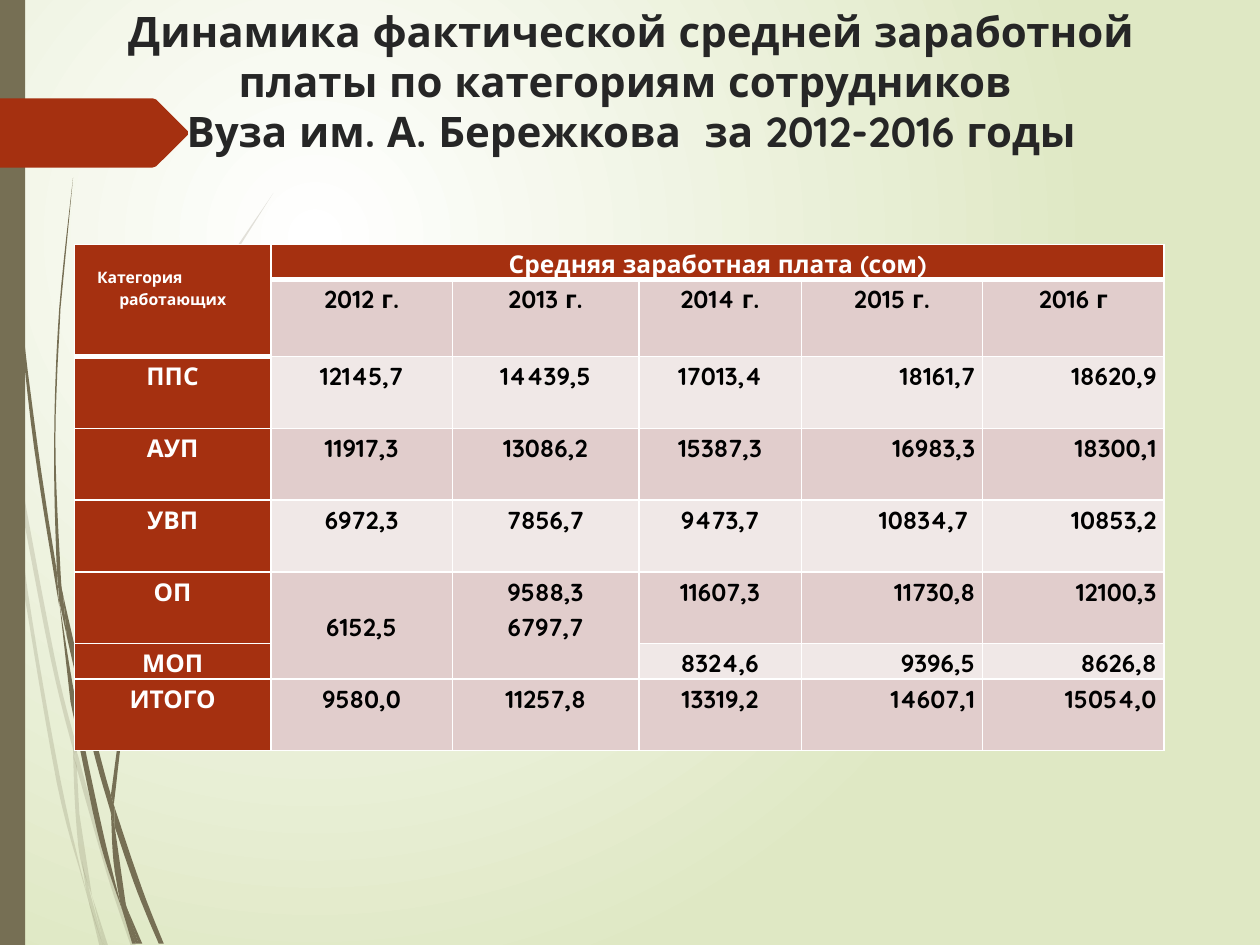
from dataclasses import dataclass
from lxml import etree
from pptx import Presentation
from pptx.dml.color import RGBColor
from pptx.enum.shapes import MSO_SHAPE
from pptx.enum.text import MSO_ANCHOR, PP_ALIGN
from pptx.oxml.ns import qn
from pptx.util import Inches, Pt

RECTANGLE = MSO_SHAPE.RECTANGLE
TOP, MIDDLE = MSO_ANCHOR.TOP, MSO_ANCHOR.MIDDLE
LEFT, CENTER, RIGHT = PP_ALIGN.LEFT, PP_ALIGN.CENTER, PP_ALIGN.RIGHT


@dataclass(frozen=True)
class Theme:
    """Colours, font and type sizes of the slide."""
    font: str = "Quicksand"
    title_size: int = 24
    table_size: int = 14
    corner_size: int = 9
    white: str = "FFFFFF"
    black: str = "000000"
    title: str = "262626"
    backdrop: str = "DFE8C4"
    olive: str = "766F54"
    accent: str = "A53010"
    band_dark: str = "E1CDCC"
    band_light: str = "F0E8E7"


THEME = Theme()

TITLE = ("Динамика фактической средней заработной платы по категориям сотрудников "
         "\vВуза им. А. Бережкова  за 2012-2016 годы")
COLUMNS = (1.56, 1.44, 1.48, 1.29, 1.44, 1.44)
ROWS = (0.28, 0.61, 0.57, 0.57, 0.57, 0.57, 0.28, 0.57)
CORNER = "Категория\nработающих"
CELLS = (
    (CORNER, "Средняя заработная плата (сом)", "", "", "", ""),
    ("", "2012 г.", "2013 г.", "2014 г.", "2015 г.", "2016 г"),
    ("ППС", "12145,7", "14439,5", "17013,4", "18161,7", "18620,9"),
    ("АУП", "11917,3", "13086,2", "15387,3", "16983,3", "18300,1"),
    ("УВП", "6972,3", "7856,7", "9473,7", "10834,7 ", "10853,2"),
    ("ОП", "6152,5", "9588,3\n6797,7", "11607,3", "11730,8", "12100,3"),
    ("МОП", "", "", "8324,6", "9396,5", "8626,8"),
    ("ИТОГО", "9580,0", "11257,8", "13319,2", "14607,1", "15054,0"),
)
MERGES = ((0, 0, 1, 0), (0, 1, 0, 5), (5, 1, 6, 1), (5, 2, 6, 2))
LIGHT_ROWS = (2, 4, 6)

PALE_WISPS = (
    (((0.08, 3.5), (0.06, 3.22), (0, 2.82)), ((0, 2.99), (0.07, 3.44))),
    (((0.1, 3.45), (0.43, 5.2), (0.59, 5.86)), ((0.59, 5.99), (0.4, 5.22), (0.12, 3.76))),
    (((0.61, 5.96), (0.64, 6.07), (0.88, 6.92), (1.08, 7.51)),
     ((1.04, 7.51), (0.85, 6.94), (0.61, 6.1))),
    (((0.73, 7.11), (0.86, 7.51)), ((0.83, 7.51),)),
    (((0.08, 3.5), (0.22, 4.69), (0.48, 6.19), (0.7, 7.14)),
     ((0.64, 6.93), (0.45, 6.21), (0.19, 4.7))),
    (((0.58, 5.99), (0.6, 6.46), (0.64, 6.83), (0.73, 7.11)), ((0.63, 6.46), (0.61, 6.08))),
    (((0.59, 5.84), (0.75, 4.61), (1.1, 3.48), (1.58, 2.44), (2.17, 1.53)),
     ((1.59, 2.45), (1.11, 3.49), (0.76, 4.62), (0.61, 5.84), (0.61, 5.96))),
    (((0.7, 7.14), (0.79, 7.51)), ((0.82, 7.51),)),
    (((0.61, 6.1), (0.61, 5.96)), ((0.59, 5.86), (0.58, 5.99))),
    (((0.65, 6.83), (0.7, 7.14), (0.82, 7.51)), ((0.83, 7.51), (0.67, 6.92))),
)
DARK_WISPS = (
    (((0.02, 0), (0.05, 1.1), (0.14, 2.33), (0.27, 3.55), (0.47, 4.81)),
     ((0.45, 4.53), (0.3, 3.55), (0.15, 2.32), (0.06, 1.09), (0.03, 0))),
    (((0.5, 4.72), (0.77, 5.9), (0.88, 6.31)), ((0.88, 6.45), (0.73, 5.92), (0.53, 5.05))),
    (((0.91, 6.41), (1.13, 7.06), (1.3, 7.49)), ((1.26, 7.49), (1.09, 7.08), (0.91, 6.56))),
    (((0.47, 4.77), (0.6, 5.56), (0.81, 6.57), (0.97, 7.22)),
     ((0.92, 7.08), (0.77, 6.59), (0.56, 5.57))),
    (((0.49, 4.72), (0.45, 4.49), (0.43, 3.49), (0.47, 2.45), (0.58, 1.41)),
     ((0.48, 2.45), (0.44, 3.49), (0.48, 4.53), (0.5, 4.72))),
    (((1, 7.19), (1.13, 7.49)), ((1.1, 7.49),)),
    (((0.45, 4.49), (0.5, 4.72)), ((0.53, 5.05), (0.47, 4.77))),
    (((0.88, 6.31), (1.01, 5.51), (1.29, 4.74), (1.68, 4.05), (2.15, 3.44)),
     ((2.16, 3.44), (1.69, 4.06), (1.31, 4.76), (1.03, 5.52), (0.91, 6.33), (0.91, 6.41))),
    (((0.97, 7.22), (1.08, 7.49)), ((1.05, 7.49),)),
    (((0.88, 6.45), (0.91, 6.91), (1, 7.19)), ((0.91, 6.56),)),
    (((0.88, 6.31), (0.91, 6.41)), ((0.91, 6.56), (0.88, 6.45))),
    (((0.91, 6.91), (0.97, 7.22), (1.08, 7.49)), ((1.1, 7.49), (0.96, 7.06))),
)
ARROW = ((0, 0.78), (1.21, 0.78), (1.24, 0.79), (1.49, 1.04),
         (1.49, 1.07), (1.24, 1.32), (1.21, 1.33), (0, 1.33))


def color(value):
    """Turn a hex string into a colour."""
    return RGBColor.from_string(value)


def paint(shape, fill, opacity=100):
    """Give a shape a flat fill without line or shadow."""
    shape.shadow.inherit = False
    shape.line.fill.background()
    shape.fill.solid()
    shape.fill.fore_color.rgb = color(fill)
    if opacity < 100:
        node = shape.fill._xPr.find(".//" + qn("a:srgbClr"))
        etree.SubElement(node, qn("a:alpha"), val=str(opacity * 1000))


def smooth(anchors, steps=6):
    """Run a Catmull-Rom curve through the anchors."""
    padded = (anchors[0], *anchors, anchors[-1])
    points = [anchors[0]]
    for a, b, c, d in zip(padded, padded[1:], padded[2:], padded[3:]):
        for t in (step / steps for step in range(1, steps + 1)):
            points.append(tuple(
                q + (r - p) * t / 2 + (2 * p - 5 * q + 4 * r - s) * t ** 2 / 2
                + (3 * q - p - 3 * r + s) * t ** 3 / 2
                for p, q, r, s in zip(a, b, c, d)))
    return points


def add_outline(slide, points, fill, opacity=100):
    """Draw a closed outline from points in inches."""
    scaled = [(x * 1000, y * 1000) for x, y in points]
    builder = slide.shapes.build_freeform(*scaled[0], scale=Inches(1) / 1000)
    builder.add_line_segments(scaled[1:], close=True)
    paint(builder.convert_to_shape(), fill, opacity)


def set_background(slide):
    """Fill the background with a radial gradient."""
    fill = slide.background.fill
    fill.gradient()
    for stop, value in zip(fill.gradient_stops, (THEME.white, THEME.backdrop)):
        stop.color.rgb = color(value)
    gradient = slide.element.find(".//" + qn("a:gradFill"))
    gradient.remove(gradient.find(qn("a:lin")))
    radial = etree.SubElement(gradient, qn("a:path"), path="circle")
    etree.SubElement(radial, qn("a:fillToRect"), l="50000", t="50000", r="100000", b="100000")


def style_paragraph(paragraph, size, value, alignment, spacing):
    """Set the type of a paragraph."""
    paragraph.alignment = alignment
    paragraph.line_spacing = spacing
    font = paragraph.font
    font.name, font.size, font.bold = THEME.font, Pt(size), True
    font.color.rgb = color(value)


def add_title(slide):
    """Place the centred heading."""
    frame = slide.shapes.add_textbox(Inches(0.51), 0, Inches(9), Inches(1.25)).text_frame
    frame.word_wrap = True
    frame.vertical_anchor = TOP
    frame.margin_top = Inches(0.05)
    frame.text = TITLE
    style_paragraph(frame.paragraphs[0], THEME.title_size, THEME.title, CENTER, Pt(28.6))


def style_cell(cell, row, column):
    """Apply text, borders and fill to one table cell."""
    is_header = row == 0 or column == 0
    is_corner = column == 0 and row < 2
    cell.text = CELLS[row][column]
    cell.margin_left = cell.margin_right = Inches(0.06)
    cell.margin_top = Inches(0.16 if is_corner else 0)
    cell.margin_bottom = 0
    cell.vertical_anchor = MIDDLE if (row, column) == (5, 1) else TOP
    size = THEME.corner_size if is_corner else THEME.table_size
    alignment = RIGHT if row > 1 and column > 3 else CENTER
    for paragraph in cell.text_frame.paragraphs:
        style_paragraph(paragraph, size, THEME.white if is_header else THEME.black, alignment, 1.15)
    if (row, column) == (0, 0):
        first = cell.text_frame.paragraphs[0]
        first.alignment = LEFT
        first._p.get_or_add_pPr().set("marL", str(Inches(0.12)))
    properties = cell._tc.get_or_add_tcPr()
    for side in "LRTB":
        width = 3 if side == "B" and (row == 0 or is_corner) else 1
        line = etree.SubElement(properties, qn(f"a:ln{side}"), w=str(Pt(width)))
        solid = etree.SubElement(line, qn("a:solidFill"))
        etree.SubElement(solid, qn("a:srgbClr"), val=THEME.white)
    cell.fill.solid()
    band = THEME.band_light if row in LIGHT_ROWS else THEME.band_dark
    cell.fill.fore_color.rgb = color(THEME.accent if is_header else band)


def add_salary_table(slide):
    """Build the salary table with its merged cells."""
    table = slide.shapes.add_table(len(ROWS), len(COLUMNS), Inches(0.59), Inches(1.94),
                                   Inches(sum(COLUMNS)), Inches(sum(ROWS))).table
    table.horz_banding = False
    for column, width in zip(table.columns, COLUMNS):
        column.width = Inches(width)
    for row, height in zip(table.rows, ROWS):
        row.height = Inches(height)
    for row in range(len(ROWS)):
        for column in range(len(COLUMNS)):
            style_cell(table.cell(row, column), row, column)
    for top, left, bottom, right in MERGES:
        table.cell(top, left).merge(table.cell(bottom, right))


def main():
    """Build and save the slide."""
    presentation = Presentation()
    presentation.slide_width, presentation.slide_height = Inches(10), Inches(7.5)
    slide = presentation.slides.add_slide(presentation.slide_layouts[6])
    set_background(slide)
    for wisps, opacity in ((PALE_WISPS, 20), (DARK_WISPS, 100)):
        for outward, back in wisps:
            add_outline(slide, smooth(outward) + smooth(back), THEME.olive, opacity)
    paint(slide.shapes.add_shape(RECTANGLE, 0, 0, Inches(0.2), Inches(7.5)), THEME.olive)
    add_outline(slide, ARROW, THEME.accent)
    add_title(slide)
    add_salary_table(slide)
    presentation.save("out.pptx")


if __name__ == "__main__":
    main()
